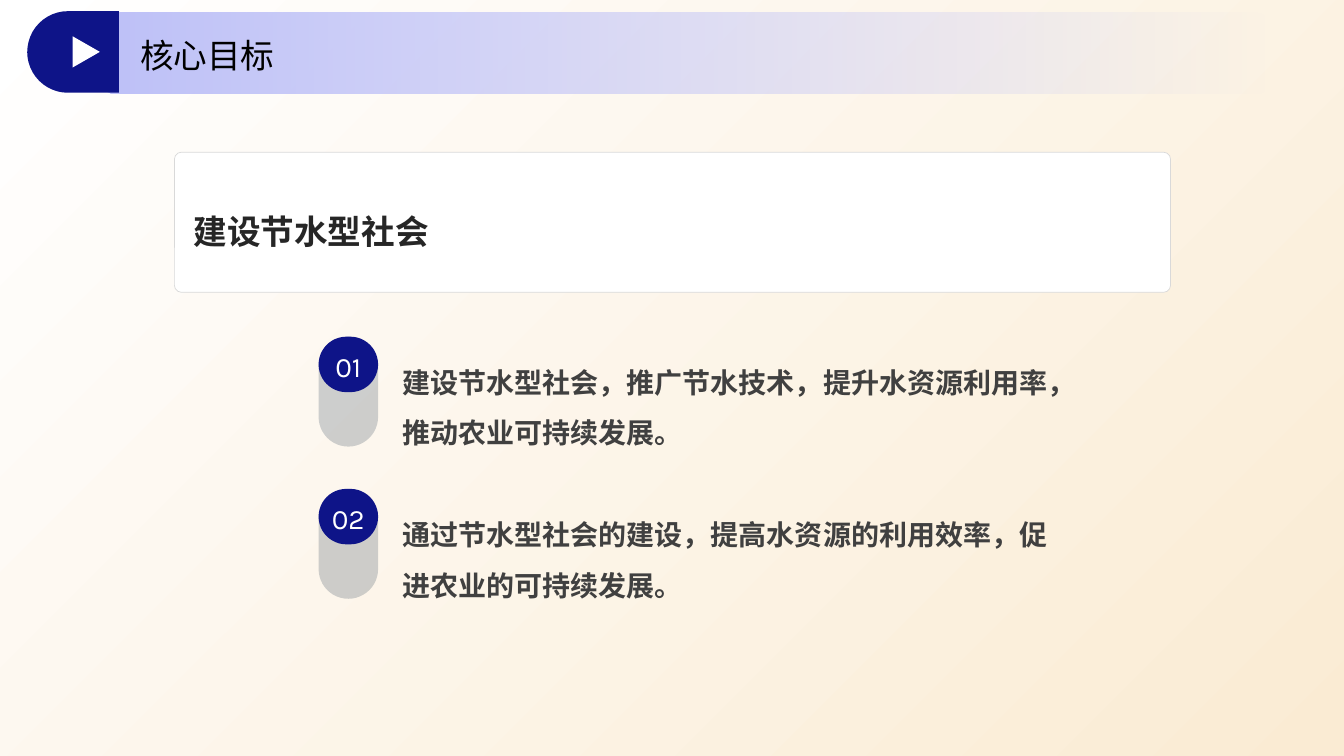
from dataclasses import dataclass

from pptx import Presentation
from pptx.dml.color import RGBColor
from pptx.enum.shapes import MSO_SHAPE
from pptx.enum.text import MSO_ANCHOR, MSO_AUTO_SIZE, PP_ALIGN
from pptx.oxml import parse_xml
from pptx.oxml.ns import nsdecls, qn
from pptx.util import Inches, Pt


@dataclass(frozen=True)
class Theme:
    navy: str = "0E1488"
    slate: str = "0E2841"
    lilac: str = "BEC1F8"
    white: str = "FFFFFF"
    cream: str = "FAEBD3"
    border: str = "D9D9D9"
    title: str = "000000"
    heading: str = "262626"
    body: str = "404040"
    cjk: str = "Noto Sans CJK SC"
    digits: str = "Karla"
    large: int = 24
    medium: int = 20


@dataclass(frozen=True)
class Box:
    left: float
    top: float
    width: float
    height: float

    def lengths(self) -> list:
        return [Inches(v) for v in (self.left, self.top, self.width, self.height)]


@dataclass(frozen=True)
class TextStyle:
    font: str
    size: int
    color: str
    bold: bool = False
    spacing: float = 1.1
    align: PP_ALIGN = PP_ALIGN.LEFT
    anchor: MSO_ANCHOR = MSO_ANCHOR.MIDDLE
    inset: float = 0
    wrap: bool = True


@dataclass(frozen=True)
class Goal:
    number: str
    text: str


T = Theme()
TITLE = TextStyle(T.cjk, T.large, T.title)
HEADING = TextStyle(T.cjk, T.large, T.heading, bold=True, spacing=1.4)
BODY = TextStyle(T.cjk, T.medium, T.body, bold=True, spacing=1.5,
                 anchor=MSO_ANCHOR.TOP, inset=0.12)
NUMBER = TextStyle(T.digits, T.medium, T.white, align=PP_ALIGN.CENTER,
                   inset=0.12, wrap=False)

GOALS = [
    Goal("01", "建设节水型社会，推广节水技术，提升水资源利用率，推动农业可持续发展。"),
    Goal("02", "通过节水型社会的建设，提高水资源的利用效率，促进农业的可持续发展。"),
]
GOAL_TOP, GOAL_STEP = 3.34, 1.51


def set_alpha(color_element, percent: int) -> None:
    color_element.append(
        parse_xml(f'<a:alpha {nsdecls("a")} val="{percent * 1000}"/>'))


def set_gradient(fill, colors: tuple, angle: int) -> None:
    """Blend two colours; the angle runs counter-clockwise in degrees."""
    fill.gradient()
    fill.gradient_angle = angle
    for stop, color in zip(fill.gradient_stops, colors):
        stop.color.rgb = RGBColor.from_string(color)


def add_shape(s, kind: MSO_SHAPE, box: Box, color: str, adjustments: tuple = (),
              rotation: int = 0):
    sp = s.shapes.add_shape(kind, *box.lengths())
    sp.shadow.inherit = False
    sp.rotation = rotation
    sp.fill.solid()
    sp.fill.fore_color.rgb = RGBColor.from_string(color)
    sp.line.fill.background()
    for i, value in enumerate(adjustments):
        sp.adjustments[i] = value
    return sp


def write(sp, text: str, style: TextStyle) -> None:
    tf = sp.text_frame
    inset = Inches(style.inset)
    frame_format = {
        "auto_size": MSO_AUTO_SIZE.NONE, "word_wrap": style.wrap,
        "vertical_anchor": style.anchor, "margin_left": inset,
        "margin_top": inset, "margin_right": inset, "margin_bottom": inset,
    }
    for name, value in frame_format.items():
        setattr(tf, name, value)
    p = tf.paragraphs[0]
    p.alignment, p.line_spacing = style.align, style.spacing
    r = p.add_run()
    r.text = text
    font_format = {"name": style.font, "size": Pt(style.size), "bold": style.bold}
    for name, value in font_format.items():
        setattr(r.font, name, value)
    r.font.color.rgb = RGBColor.from_string(style.color)
    r.font._element.find(qn("a:latin")).addnext(
        parse_xml(f'<a:ea {nsdecls("a")} typeface="{style.font}"/>'))


def add_text(s, box: Box, text: str, style: TextStyle) -> None:
    write(s.shapes.add_textbox(*box.lengths()), text, style)


def add_header(s, text: str) -> None:
    band = add_shape(s, MSO_SHAPE.ROUNDED_RECTANGLE, Box(1, 0.12, 11.6, 0.81), T.lilac)
    set_gradient(band.fill, (T.lilac, T.lilac), 0)
    set_alpha(list(band._element.spPr.iter(qn("a:srgbClr")))[-1], 0)

    title = s.shapes.title
    title.left, title.top, title.width, title.height = Box(1.39, 0.26, 8.51, 0.54).lengths()
    write(title, text, TITLE)
    s.shapes._spTree.append(title._element)  # in front of the band

    add_shape(s, MSO_SHAPE.ROUND_2_SAME_RECTANGLE, Box(0.32, 0.06, 0.81, 0.91),
              T.navy, (0.5, 0), 270)
    add_shape(s, MSO_SHAPE.ISOSCELES_TRIANGLE, Box(0.7, 0.38, 0.31, 0.27),
              T.white, rotation=90)


def add_card(s, text: str) -> None:
    card = add_shape(s, MSO_SHAPE.ROUNDED_RECTANGLE, Box(1.73, 1.51, 9.88, 1.39),
                     T.white, (0.05,))
    card.line.color.rgb = RGBColor.from_string(T.border)
    card.line.width = Pt(0.5)
    add_text(s, Box(1.92, 1.64, 9.5, 1.15), text, HEADING)


def add_goal(s, goal: Goal, top: float) -> None:
    pill = add_shape(s, MSO_SHAPE.ROUNDED_RECTANGLE, Box(3.16, top, 0.59, 1.09),
                     T.slate, (0.5,))
    set_alpha(next(pill._element.spPr.iter(qn("a:srgbClr"))), 20)
    badge = add_shape(s, MSO_SHAPE.ROUNDED_RECTANGLE, Box(3.16, top, 0.59, 0.55),
                      T.navy, (0.5,))
    write(badge, goal.number, NUMBER)
    add_text(s, Box(3.87, top, 6.67, 1.15), goal.text, BODY)


def main() -> None:
    prs = Presentation()
    prs.slide_width, prs.slide_height = Inches(13.33), Inches(7.5)
    s = prs.slides.add_slide(prs.slide_layouts.get_by_name("Title Only"))
    set_gradient(s.background.fill, (T.white, T.cream), 315)
    add_header(s, "核心目标")
    add_card(s, "建设节水型社会")
    for i, goal in enumerate(GOALS):
        add_goal(s, goal, GOAL_TOP + i * GOAL_STEP)
    prs.save("out.pptx")


if __name__ == "__main__":
    main()
